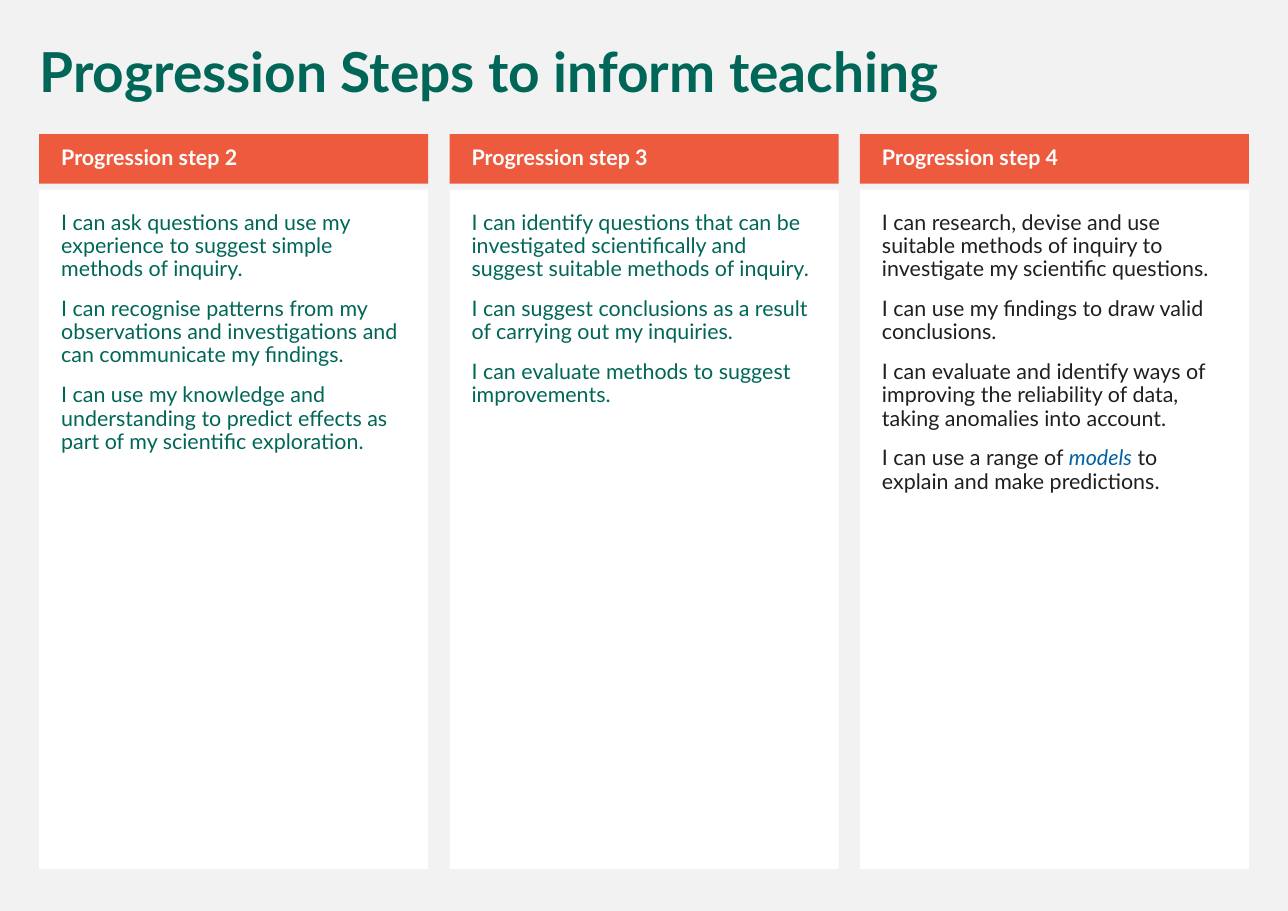
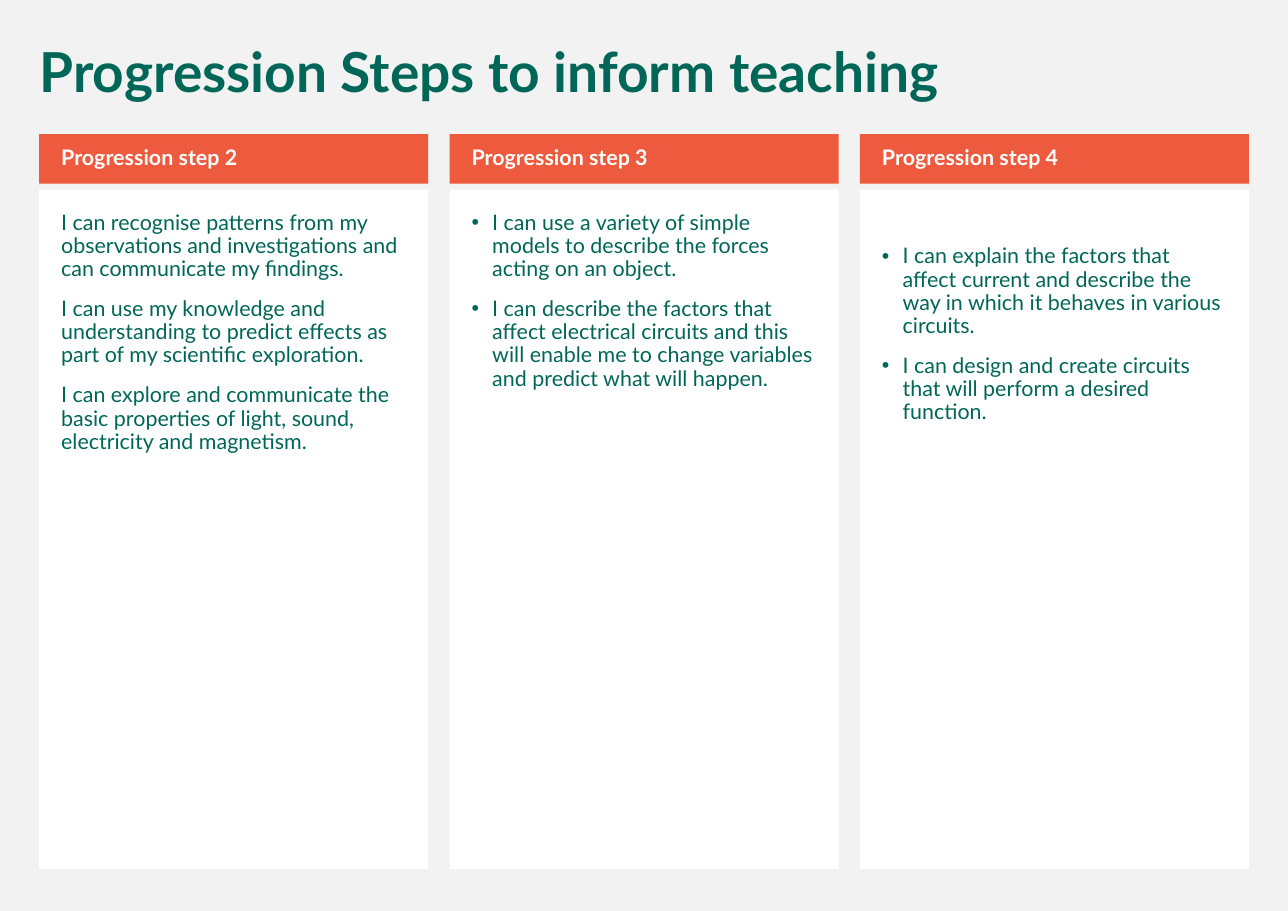
"""Build two slides that set progression steps side by side in columns."""
from dataclasses import dataclass, field

from lxml import etree
from pptx import Presentation
from pptx.dml.color import RGBColor
from pptx.enum import shapes, text
from pptx.oxml import ns
from pptx.util import Pt


@dataclass(frozen=True)
class Theme:
    """Colours, type sizes and spacing shared by the slides."""
    font: str = "Lato"
    page: str = "F2F2F2"
    panel: str = "FFFFFF"
    band: str = "ED5A3E"
    green: str = "006758"
    dark: str = "1F1F1F"
    term: str = "0360A6"
    title_size: float = 36
    text_size: float = 14
    line: float = 0.9
    before: float = 11
    indent: float = 13.5
    pad: float = 14.4


T = Theme()
WIDTH, HEIGHT = 841.68, 595.44
TITLE = "Progression Steps to inform teaching"
TITLE_BOX = (18.7, 25.9, 797.8, 46.8)
COLUMNS_BOX = (25.6, 87.6, 790.6, 480.5)
COLUMN_W, BAND_H, BAND_GAP = 254.2, 32.4, 4


@dataclass(frozen=True)
class Step:
    """One column: its heading, its statements and their style."""
    heading: str
    statements: list = field(default_factory=list)
    color: str = T.green
    bullets: bool = False
    lead: float = 0


def rgb(value):
    """Return a colour from its hex string."""
    return RGBColor.from_string(value)


def add_run(p, content, size, color, bold=False, italic=False):
    """Add one styled run to a paragraph."""
    r = p.add_run()
    r.text = content
    f = r.font
    f.name, f.size, f.bold, f.italic = T.font, Pt(size), bold, italic
    f.color.rgb = rgb(color)


def add_bullet(p):
    """Give a paragraph a round bullet and a hanging indent."""
    pPr = p._p.get_or_add_pPr()
    pPr.set("marL", str(Pt(T.indent)))
    pPr.set("indent", str(-Pt(T.indent)))
    etree.SubElement(pPr, ns.qn("a:buFont")).set("typeface", "Arial")
    etree.SubElement(pPr, ns.qn("a:buChar")).set("char", "•")


def next_paragraph(tf, first):
    """Return the next paragraph with the shared spacing."""
    p = tf.paragraphs[0] if first else tf.add_paragraph()
    p.alignment = text.PP_ALIGN.LEFT
    p.line_spacing, p.space_before = T.line, Pt(T.before)
    return p


def set_frame(sp, insets, anchor=text.MSO_ANCHOR.TOP):
    """Set wrapping, insets and anchor, and return the text frame."""
    tf = sp.text_frame
    tf.word_wrap = True
    tf.vertical_anchor = anchor
    tf.margin_left, tf.margin_top, tf.margin_right, tf.margin_bottom = map(Pt, insets)
    return tf


def add_rect(s, box, fill):
    """Add a plain filled rectangle."""
    sp = s.shapes.add_shape(shapes.MSO_SHAPE.RECTANGLE, *map(Pt, box))
    sp.shadow.inherit = False
    sp.fill.solid()
    sp.fill.fore_color.rgb = rgb(fill)
    sp.line.fill.background()
    return sp


def add_title(s, box):
    """Add the slide title."""
    sp = s.shapes.add_textbox(*map(Pt, box))
    tf = set_frame(sp, (7.2, 3.6, 7.2, 3.6))
    add_run(next_paragraph(tf, True), TITLE, T.title_size, T.green, bold=True)


def add_band(s, box, heading):
    """Add the coloured heading band of a column."""
    tf = set_frame(add_rect(s, box, T.band), (T.pad, 3.6, 7.2, 3.6), text.MSO_ANCHOR.MIDDLE)
    add_run(next_paragraph(tf, True), heading, T.text_size, T.panel, bold=True)


def add_panel(s, box, step):
    """Add the white panel with the statements of a step."""
    tf = set_frame(add_rect(s, box, T.panel), (T.pad, T.pad + step.lead, T.pad, T.pad))
    for i, statement in enumerate(step.statements):
        p = next_paragraph(tf, i == 0)
        if step.bullets:
            add_bullet(p)
        parts = (statement,) if isinstance(statement, str) else statement
        for j, part in enumerate(parts):
            is_term = j % 2 == 1
            add_run(p, part, T.text_size, T.term if is_term else step.color, italic=is_term)


def add_column(s, box, step):
    """Add a panel and its heading band within a box."""
    x, y, w, h = box
    top = BAND_H + BAND_GAP
    add_panel(s, (x, y + top, w, h - top), step)
    add_band(s, (x, y, w, BAND_H), step.heading)


def add_steps_slide(prs, steps):
    """Add a slide with a title and evenly spaced columns."""
    s = prs.slides.add_slide(prs.slide_layouts[6])
    x, y, w, h = COLUMNS_BOX
    pitch = (w - COLUMN_W) / (len(steps) - 1)
    for i, step in enumerate(steps):
        add_column(s, (x + i * pitch, y, COLUMN_W, h), step)
    add_title(s, TITLE_BOX)


PATTERNS = ("I can recognise patterns from my observations and investigations "
            "and can communicate my findings.")
PREDICT = ("I can use my knowledge and understanding to predict effects "
           "as part of my scientific exploration.")
HEADINGS = [f"Progression step {n}" for n in (2, 3, 4)]

SLIDES = [
    [
        Step(HEADINGS[0], [
            "I can ask questions and use my experience to suggest simple methods of inquiry.",
            PATTERNS,
            PREDICT,
        ]),
        Step(HEADINGS[1], [
            "I can identify questions that can be investigated scientifically "
            "and suggest suitable methods of inquiry.",
            "I can suggest conclusions as a result of carrying out my inquiries.",
            "I can evaluate methods to suggest improvements.",
        ]),
        Step(HEADINGS[2], [
            "I can research, devise and use suitable methods of inquiry "
            "to investigate my scientific questions.",
            "I can use my findings to draw valid conclusions.",
            "I can evaluate and identify ways of improving the reliability of data, "
            "taking anomalies into account.",
            ("I can use a range of ", "models", " to explain and make predictions."),
        ], color=T.dark),
    ],
    [
        Step(HEADINGS[0], [
            PATTERNS,
            PREDICT,
            "I can explore and communicate the basic properties of light, sound, "
            "electricity and magnetism.",
        ]),
        Step(HEADINGS[1], [
            "I can use a variety of simple models to describe the forces acting on an object.",
            "I can describe the factors that affect electrical circuits and this will "
            "enable me to change variables and predict what will happen.",
        ], bullets=True),
        Step(HEADINGS[2], [
            "I can explain the factors that affect current and describe the way "
            "in which it behaves in various circuits.",
            "I can design and create circuits that will perform a desired function.",
        ], bullets=True, lead=22),
    ],
]


def main():
    """Build and save the presentation."""
    prs = Presentation()
    prs.slide_width, prs.slide_height = Pt(WIDTH), Pt(HEIGHT)
    fill = prs.slide_master.background.fill
    fill.solid()
    fill.fore_color.rgb = rgb(T.page)
    for steps in SLIDES:
        add_steps_slide(prs, steps)
    prs.save("out.pptx")


if __name__ == "__main__":
    main()
